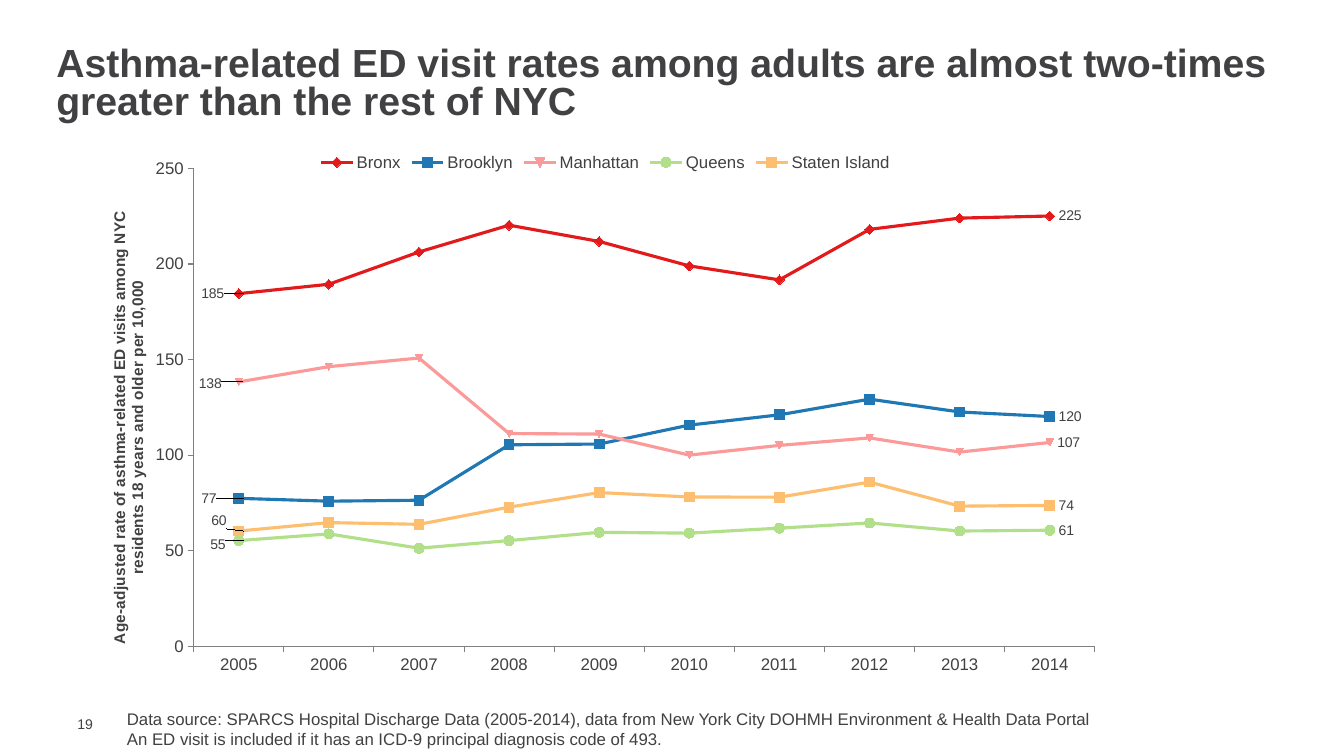
from lxml import etree
from pptx import Presentation
from pptx.chart.data import CategoryChartData
from pptx.dml.color import RGBColor
from pptx.enum.chart import XL_CHART_TYPE, XL_LABEL_POSITION, XL_LEGEND_POSITION, XL_MARKER_STYLE, XL_TICK_MARK
from pptx.enum.text import MSO_ANCHOR
from pptx.oxml import parse_xml
from pptx.oxml.ns import nsdecls, qn
from pptx.util import Inches, Pt

YEARS = [str(year) for year in range(2005, 2015)]
CHART_WIDTH, CHART_HEIGHT = 10.01, 5.45

# Name, colour, marker, shift of the first label in inches, yearly rates
BOROUGHS = [
    ("Bronx", "E31A1C", XL_MARKER_STYLE.DIAMOND, (-0.46, 0),
     [184.5, 189.4, 206.3, 220.3, 211.8, 199, 191.7, 218.1, 224, 225.1]),
    ("Brooklyn", "1F78B4", XL_MARKER_STYLE.SQUARE, (-0.46, 0),
     [77.4, 75.9, 76.4, 105.4, 105.8, 115.7, 121.1, 129.3, 122.6, 120.2]),
    ("Manhattan", "FB9A99", None, (-0.47, 0.02),
     [138.3, 146.3, 150.8, 111.3, 111, 100, 105.1, 109, 101.6, 106.6]),
    ("Queens", "B2DF8A", XL_MARKER_STYLE.CIRCLE, (-0.37, 0.04),
     [55.3, 58.8, 51.3, 55.3, 59.6, 59.2, 61.8, 64.5, 60.3, 60.7]),
    ("Staten Island", "FDBF6F", XL_MARKER_STYLE.SQUARE, (-0.36, -0.1),
     [60.3, 64.7, 63.8, 72.8, 80.4, 78.1, 78, 85.9, 73.3, 73.7]),
]


def color(code):
    return RGBColor.from_string(code)


def layout(**settings):
    """Manual chart layout; the settings are its child elements in order."""
    element = parse_xml(f"<c:layout {nsdecls('c')}><c:manualLayout/></c:layout>")
    for name, value in settings.items():
        etree.SubElement(element[0], qn(f"c:{name}")).set("val", str(value))
    return element


class SlideBuilder:
    font_name = "Arial"
    ink = "414042"
    axis_gray = "808080"

    def __init__(self, page):
        self.page = page

    def style(self, font, size, bold=False):
        font.name = self.font_name
        font.size = Pt(size)
        font.bold = bold
        font.color.rgb = color(self.ink)

    def text(self, place, lines, size, bold=False, anchor=MSO_ANCHOR.TOP, spacing=None, inset=0.05):
        box = self.page.shapes.add_textbox(*map(Inches, place))
        frame = box.text_frame
        frame.word_wrap = True
        frame.vertical_anchor = anchor
        frame.margin_top = frame.margin_bottom = Inches(inset)
        frame.text = "\n".join(lines)
        for para in frame.paragraphs:
            para.line_spacing = spacing
            for span in para.runs:
                self.style(span.font, size, bold)

    def axis(self, axis):
        axis.has_major_gridlines = False
        axis.major_tick_mark = XL_TICK_MARK.OUTSIDE
        axis.minor_tick_mark = XL_TICK_MARK.NONE
        axis.format.line.color.rgb = color(self.axis_gray)
        axis.format.line.width = Pt(0.75)
        self.style(axis.tick_labels.font, 12)

    def axis_title(self, axis, title, left, top):
        frame = axis.axis_title.text_frame
        frame.text = title
        self.style(frame.paragraphs[0].runs[0].font, 11, True)
        element = axis.axis_title._element
        for old in element.findall(qn("c:layout")):
            element.remove(old)
        element.find(qn("c:tx")).addnext(layout(xMode="edge", yMode="edge", x=left, y=top))

    def series(self, series, code, marker, shift):
        series.smooth = False
        series.format.line.color.rgb = color(code)
        series.format.line.width = Pt(2.25)
        if marker is not None:
            series.marker.style = marker
            series.marker.size = 7
        series.marker.format.fill.solid()
        series.marker.format.fill.fore_color.rgb = color(code)
        series.marker.format.line.color.rgb = color(code)

        # Label only the first and last year
        labels = series.data_labels
        labels.show_value = False
        for index in (0, len(YEARS) - 1):
            label = series.points[index].data_label
            self.style(label.font, 10)
            label.position = XL_LABEL_POSITION.RIGHT
        block = series._element.find(qn("c:dLbls"))
        first = block.find(qn("c:dLbl"))
        first.find(qn("c:idx")).addnext(
            layout(x=shift[0] / CHART_WIDTH, y=shift[1] / CHART_HEIGHT))
        for old in block.findall(qn("c:showLeaderLines")):
            block.remove(old)
        block.append(parse_xml(
            f'<c:extLst {nsdecls("c")}><c:ext uri="{{CE6537A1-D6FC-4f65-9D91-7224C49458BB}}" '
            'xmlns:c15="http://schemas.microsoft.com/office/drawing/2012/chart">'
            '<c15:showLeaderLines val="1"/></c:ext></c:extLst>'))

    def line_chart(self, left, top, axis_title):
        data = CategoryChartData(number_format="0")
        data.categories = YEARS
        for name, *_, rates in BOROUGHS:
            data.add_series(name, rates)
        place = map(Inches, (left, top, CHART_WIDTH, CHART_HEIGHT))
        chart = self.page.shapes.add_chart(XL_CHART_TYPE.LINE_MARKERS, *place, data).chart
        chart.has_title = False
        self.style(chart.font, 10)
        chart.plots[0].vary_by_categories = False

        # Axes and plot area
        self.axis(chart.category_axis)
        self.axis(chart.value_axis)
        chart.value_axis.minimum_scale = 0
        chart.value_axis.maximum_scale = 250
        chart.value_axis.major_unit = 50
        self.axis_title(chart.value_axis, axis_title, 0.005, 0.12)
        plot_area = chart._chartSpace.chart.plotArea
        for old in plot_area.findall(qn("c:layout")):
            plot_area.remove(old)
        plot_area.insert(0, layout(layoutTarget="inner", xMode="edge", yMode="edge",
                                   x=0.092, y=0.048, w=0.893, h=0.87))

        # Legend
        chart.has_legend = True
        chart.legend.position = XL_LEGEND_POSITION.TOP
        chart.legend.include_in_layout = False
        self.style(chart.legend.font, 12)

        for series, (_, code, marker, shift, _) in zip(chart.plots[0].series, BOROUGHS):
            self.series(series, code, marker, shift)


def main():
    deck = Presentation()
    deck.slide_width, deck.slide_height = Inches(13.33), Inches(7.5)
    builder = SlideBuilder(deck.slides.add_slide(deck.slide_layouts[6]))

    # Title
    builder.text((0.46, 0.42, 12.41, 0.85),
                 ["Asthma-related ED visit rates among adults are almost two-times greater than the rest of NYC"],
                 28, bold=True, anchor=MSO_ANCHOR.MIDDLE, spacing=0.8)

    # Chart
    builder.line_chart(1, 1.41, "Age-adjusted rate of asthma-related ED visits among NYC "
                                "residents 18 years and older per 10,000")

    # Source note and page number
    builder.text((1.16, 6.98, 9.92, 0.5),
                 ["Data source: SPARCS Hospital Discharge Data (2005-2014), data from New York City DOHMH "
                  "Environment & Health Data Portal",
                  "An ED visit is included if it has an ICD-9 principal diagnosis code of 493."], 12)
    builder.text((0.67, 7.1, 0.43, 0.17), ["19"], 10, anchor=MSO_ANCHOR.MIDDLE, inset=0)

    deck.save("out.pptx")


if __name__ == "__main__":
    main()
